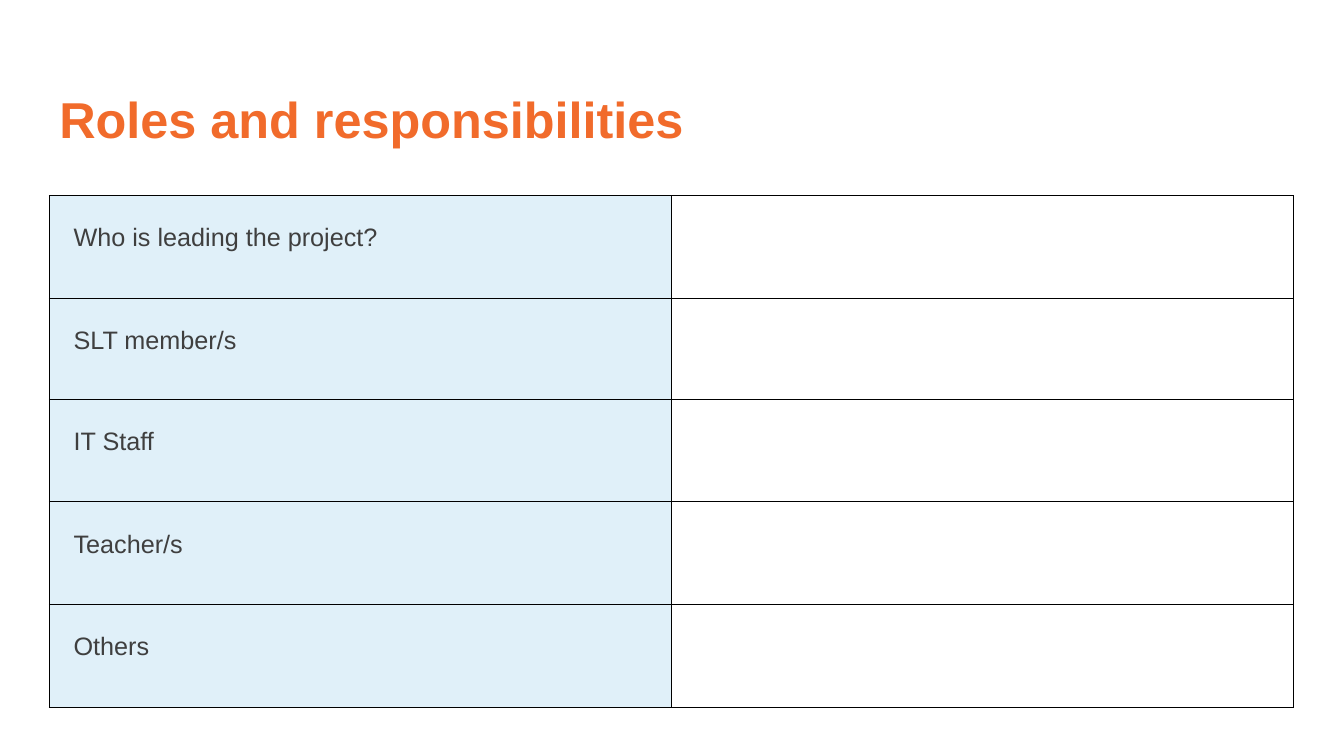
from lxml.etree import SubElement
from pptx import Presentation
from pptx.dml.color import RGBColor
from pptx.enum.text import MSO_ANCHOR
from pptx.oxml.ns import qn
from pptx.util import Inches, Pt

# Content
TITLE = "Roles and responsibilities"
ROLES = ["Who is leading the project?", "SLT member/s", "IT Staff", "Teacher/s", "Others"]

# Layout and formats
LEFT, TABLE_TOP = 0.49, 1.94
COLUMN_WIDTH = 6.17
ROW_HEIGHTS = [1.02, 1, 1.02, 1.02, 1.02]
CELL_MARGIN = 0.24
COLUMN_FILLS = ["E0F0F9", "FFFFFF"]
BORDER_COLOR, BORDER_WIDTH = "000000", 0.75
TITLE_FONT = {"name": "Arial", "size": Pt(36), "bold": True}
ROLE_FONT = {"name": "Arial", "size": Pt(18), "bold": False}


def color(value):
    return RGBColor.from_string(value)


def write(frame, text, font_format, font_color, line_spacing):
    paragraph = frame.paragraphs[0]
    paragraph.line_spacing = line_spacing
    run = paragraph.add_run()
    run.text = text
    for name, value in font_format.items():
        setattr(run.font, name, value)
    run.font.color.rgb = color(font_color)


def add_borders(cell):
    properties = cell._tc.get_or_add_tcPr()
    for side in ("lnL", "lnR", "lnT", "lnB"):
        line = SubElement(properties, qn(f"a:{side}"), w=str(Pt(BORDER_WIDTH)))
        fill = SubElement(line, qn("a:solidFill"))
        SubElement(fill, qn("a:srgbClr"), val=BORDER_COLOR)


presentation = Presentation()
presentation.slide_width, presentation.slide_height = Inches(13.33), Inches(7.5)
slide = presentation.slides.add_slide(presentation.slide_layouts[6])

# Title
title = slide.shapes.add_textbox(Inches(LEFT), Inches(0.49), Inches(11.5), Inches(1.45))
title.text_frame.word_wrap = True
title.text_frame.vertical_anchor = MSO_ANCHOR.MIDDLE
write(title.text_frame, TITLE, TITLE_FONT, "F16B2B", 0.9)

# Table of roles with an empty answer column
table = slide.shapes.add_table(
    len(ROLES), len(COLUMN_FILLS), Inches(LEFT), Inches(TABLE_TOP),
    Inches(COLUMN_WIDTH * len(COLUMN_FILLS)), Inches(sum(ROW_HEIGHTS)),
).table
table.first_row = table.horz_banding = False
for column in table.columns:
    column.width = Inches(COLUMN_WIDTH)
for row, height, role in zip(table.rows, ROW_HEIGHTS, ROLES):
    row.height = Inches(height)
    for cell, cell_fill in zip(row.cells, COLUMN_FILLS):
        for side in ("left", "right", "top", "bottom"):
            setattr(cell, f"margin_{side}", Inches(CELL_MARGIN))
        add_borders(cell)
        cell.fill.solid()
        cell.fill.fore_color.rgb = color(cell_fill)
    write(row.cells[0].text_frame, role, ROLE_FONT, "3F3F3F", 1.15)

presentation.save("out.pptx")
